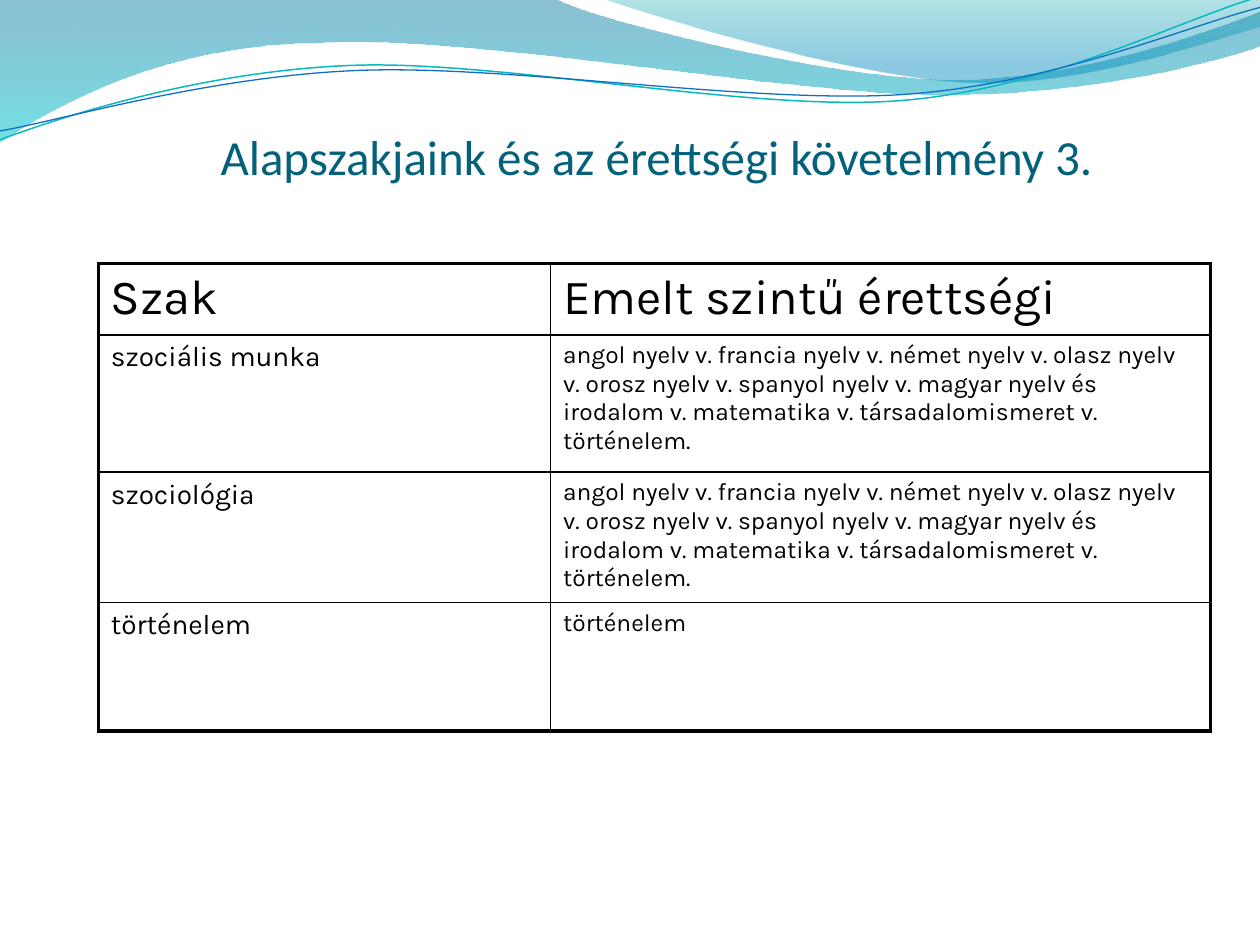
from collections import namedtuple
from math import cos, radians, sin

from lxml.etree import SubElement
from pptx import Presentation
from pptx.dml.color import RGBColor
from pptx.enum.text import MSO_ANCHOR as Anchor, PP_ALIGN as Align
from pptx.oxml.ns import qn
from pptx.util import Inches, Pt

COLORS = {
    "text": "000000", "title": "04617B", "border": "000000",
    "deep": "0074A1", "cyan": "00C6CF", "teal": "00A1A9", "blue": "008BBF",
    "teal_line": "0AB8BF", "blue_line": "0F6FC6",
}
COLUMNS, ROWS = 10, 7.5  # slide grid
CELL = Inches(1)
LINE_TILT = 2.7
Box = namedtuple("Box", "left top width height")

# Each outline entry is a corner (one point) or a curve (two handles and an end)
BANDS = [
    ([[(0, -0.01)], [(4.4, -0.01)], [(4.76, 0.17), (6.64, 0.63), (7.58, 0.63)],
      [(8.53, 0.63), (9.58, 0.26), (10, 0.09)], [(10.01, 0.36)],
      [(9.83, 0.44), (8.7, 0.76), (7.46, 0.75)],
      [(6.22, 0.75), (3.82, 0.28), (2.57, 0.34)],
      [(1.29, 0.35), (0.46, 0.83), (-0.01, 1.13)]],
     [(0, "deep", 45), (1, "cyan", 55)]),
    ([[(4.79, -0.01)], [(5.09, 0.11), (6.82, 0.62), (7.69, 0.65)],
      [(8.56, 0.69), (9.61, 0.32), (10, 0.21)], [(10, 0)]],
     [(0, "teal", 30), (0.8, "blue", 45)]),
]
WAVE_LINES = [
    ([[(0, 1.11)], [(0.48, 0.93), (1.58, 0.57), (2.77, 0.52)],
      [(3.95, 0.47), (5.93, 0.89), (7.13, 0.8)],
      [(8.33, 0.71), (9.38, 0.15), (9.98, -0.02)]], "teal_line", 0.85),
    ([[(0, 1.04)], [(0.47, 0.96), (1.64, 0.61), (2.83, 0.56)],
      [(4.03, 0.51), (5.97, 0.83), (7.17, 0.75)],
      [(8.36, 0.67), (9.41, 0.21), (10, 0.06)]], "blue_line", 0.75),
]

LANGUAGE_SUBJECTS = (
    "angol nyelv v. francia nyelv v. német nyelv v. olasz nyelv v. orosz nyelv v. "
    "spanyol nyelv v. magyar nyelv és irodalom v. matematika v. "
    "társadalomismeret v. történelem.")
REQUIREMENTS = [
    ("Szak", "Emelt szintű érettségi"),
    ("szociális munka", LANGUAGE_SUBJECTS),
    ("szociológia", LANGUAGE_SUBJECTS),
    ("történelem", "történelem"),
]
COLUMN_WIDTHS = (3.59, 5.24)
ROW_HEIGHTS = (0.56, 1.09, 1.03, 1.02)


def color(name):
    return RGBColor.from_string(COLORS[name])


def grid(*cells):
    return [round(cell * CELL) for cell in cells]


def add_run(paragraph, text, font, size, color_name):
    run = paragraph.add_run()
    run.text = text
    run.font.name, run.font.size = font, Pt(size)
    run.font.color.rgb = color(color_name)


def turn(outline, degrees):
    """Rotate an outline about the middle of its two ends."""
    (x1, y1), (x2, y2) = outline[0][-1], outline[-1][-1]
    cx, cy = (x1 + x2) / 2, (y1 + y2) / 2
    c, s = cos(radians(degrees)), sin(radians(degrees))
    return [[(cx + (x - cx) * c - (y - cy) * s, cy + (x - cx) * s + (y - cy) * c)
             for x, y in entry] for entry in outline]


def add_outline(slide, box, outline, close):
    """Build a freeform through the corners, then bend its curved segments."""
    entries = [[grid(box.left + x, box.top + y) for x, y in entry] for entry in outline]
    builder = slide.shapes.build_freeform(*entries[0][-1])
    builder.add_line_segments([entry[-1] for entry in entries[1:]], close=close)
    shape = builder.convert_to_shape()
    shape.shadow.inherit = False
    segments = list(shape.element.iter(qn("a:lnTo")))
    for segment, entry in zip(segments, entries[1:]):
        if len(entry) == 3:
            curve = segment.makeelement(qn("a:cubicBezTo"), {})
            for x, y in entry:
                SubElement(curve, qn("a:pt"), x=str(x - shape.left), y=str(y - shape.top))
            segment.getparent().replace(segment, curve)
    return shape


def add_waves(slide, box):
    # Translucent bands
    for outline, stops in BANDS:
        band = add_outline(slide, box, outline, True)
        band.line.fill.background()
        band.fill.gradient()
        band.fill.gradient_angle = 270
        for stop, (position, name, _) in zip(band.fill.gradient_stops, stops):
            stop.position = position
            stop.color.rgb = color(name)
        tints = band.element.spPr.iter(qn("a:srgbClr"))
        for tint, (_, _, opacity) in zip(tints, stops):
            SubElement(tint, qn("a:alpha"), val=str(opacity * 1000))
    # Thin tilted lines
    for outline, name, width in WAVE_LINES:
        wave = add_outline(slide, box, turn(outline, LINE_TILT), False)
        wave.rotation = 360 - LINE_TILT
        wave.fill.background()
        wave.line.color.rgb = color(name)
        wave.line.width = Pt(width)


def add_title(slide, box):
    frame = slide.shapes.add_textbox(*grid(*box)).text_frame
    frame.word_wrap = True
    frame.vertical_anchor = Anchor.BOTTOM
    frame.margin_left = frame.margin_right = frame.margin_bottom = 0
    frame.margin_top = Inches(0.05)
    paragraph = frame.paragraphs[0]
    paragraph.alignment = Align.LEFT
    add_run(paragraph, "Alapszakjaink és az érettségi követelmény 3.",
            "Calibri", 28, "title")


def set_borders(cell, outer_sides):
    properties = cell._tc.get_or_add_tcPr()
    for index, side in enumerate("LRTB"):
        width = Pt(2.25 if side in outer_sides else 1)
        line = properties.makeelement(qn(f"a:ln{side}"), {"w": str(width)})
        fill = SubElement(line, qn("a:solidFill"))
        SubElement(fill, qn("a:srgbClr"), val=COLORS["border"])
        properties.insert(index, line)


def add_requirements(slide, box):
    last_row, last_column = len(ROW_HEIGHTS) - 1, len(COLUMN_WIDTHS) - 1
    table = slide.shapes.add_table(last_row + 1, last_column + 1, *grid(*box)).table
    table.first_row = table.horz_banding = False
    for column, width in zip(table.columns, grid(*COLUMN_WIDTHS)):
        column.width = width
    for row, height in zip(table.rows, grid(*ROW_HEIGHTS)):
        row.height = height
    for r, texts in enumerate(REQUIREMENTS):
        for c, text in enumerate(texts):
            cell = table.cell(r, c)
            cell.fill.background()
            paragraph = cell.text_frame.paragraphs[0]
            spacing = SubElement(paragraph._p.get_or_add_pPr(), qn("a:spcBef"))
            SubElement(spacing, qn("a:spcPct"), val="20000")
            add_run(paragraph, text, "Karla", 28 if r == 0 else (16, 14)[c], "text")
            edges = {"T": r == 0, "B": r == last_row, "L": c == 0, "R": c == last_column}
            set_borders(cell, [side for side, outer in edges.items() if outer])


def main():
    presentation = Presentation()
    presentation.slide_width, presentation.slide_height = grid(COLUMNS, ROWS)
    slide = presentation.slides.add_slide(presentation.slide_layouts[6])
    add_waves(slide, Box(0, 0, COLUMNS, 1.14))
    add_title(slide, Box(1.75, 0.33, 8.25, 1.14))
    add_requirements(slide, Box(0.78, 2.09, sum(COLUMN_WIDTHS), sum(ROW_HEIGHTS)))
    presentation.save("out.pptx")


if __name__ == "__main__":
    main()
